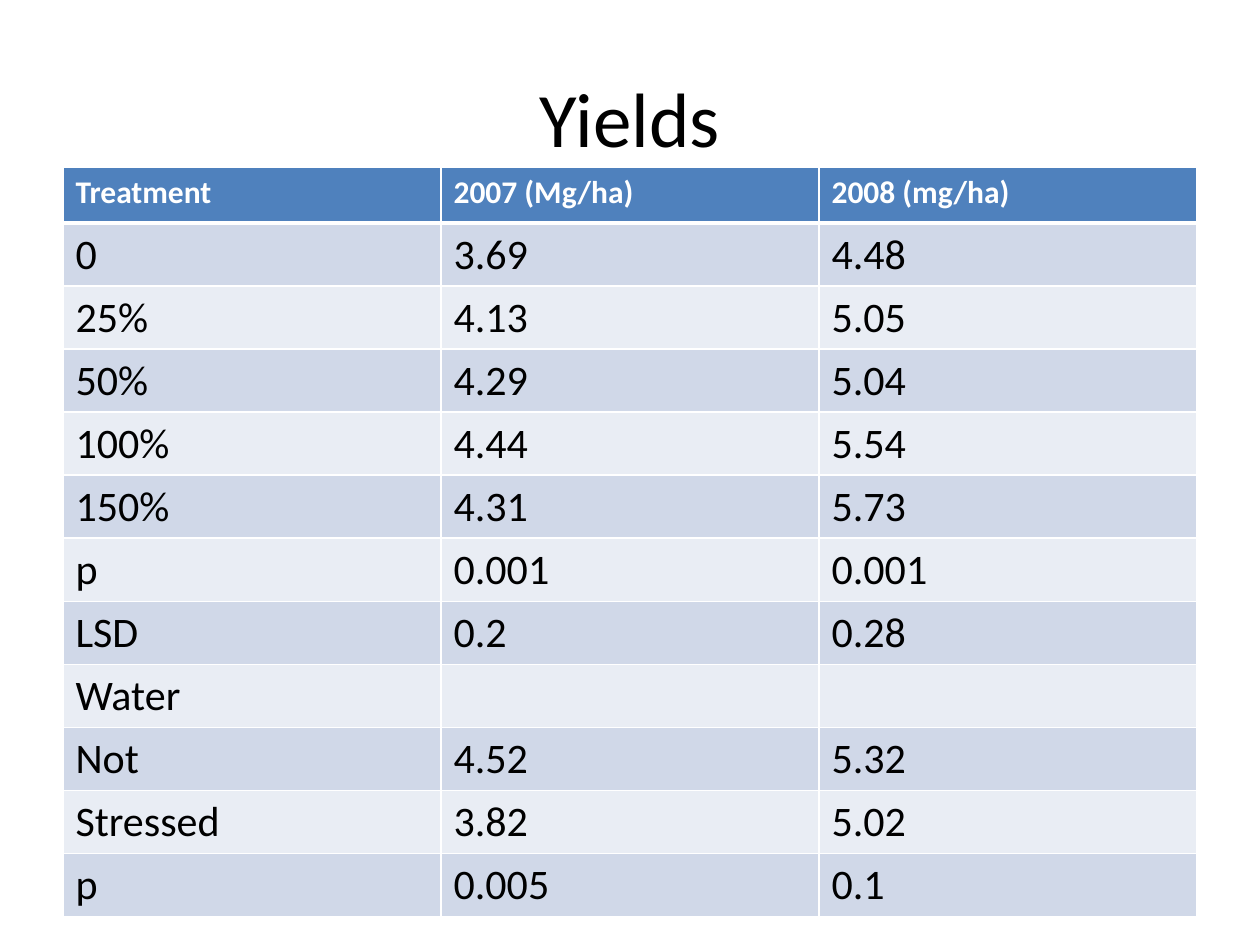
from lxml.etree import SubElement
from pptx import Presentation
from pptx.dml.color import RGBColor
from pptx.enum.text import MSO_ANCHOR, PP_ALIGN
from pptx.oxml.ns import qn
from pptx.util import Inches, Pt

# Content
TITLE = "Yields"
YIELDS = [
    ("Treatment", "2007 (Mg/ha)", "2008 (mg/ha)"),
    ("0", "3.69", "4.48"),
    ("25%", "4.13", "5.05"),
    ("50%", "4.29", "5.04"),
    ("100%", "4.44", "5.54"),
    ("150%", "4.31", "5.73"),
    ("p", "0.001", "0.001"),
    ("LSD", "0.2", "0.28"),
    ("Water", "", ""),
    ("Not", "4.52", "5.32"),
    ("Stressed", "3.82", "5.02"),
    ("p", "0.005", "0.1"),
]

# Formats
COLORS = {
    "text": "000000",
    "white": "FFFFFF",
    "header": "4F81BD",
    "dark_band": "D0D8E8",
    "light_band": "E9EDF4",
}
TITLE_FONT = {"name": "Calibri", "size": Pt(44), "bold": False}
HEADER_FONT = {"name": "Calibri", "size": Pt(18), "bold": True}
BODY_FONT = {"name": "Calibri", "size": Pt(24), "bold": False}
LEFT, WIDTH = Inches(0.5), Inches(9)
TABLE_TOP, TABLE_HEIGHT, ROW_HEIGHT = Inches(1.33), Inches(5.94), Inches(0.44)


def write(paragraph, text, font_format, color):
    run = paragraph.add_run()
    run.text = text
    for attribute, value in font_format.items():
        setattr(run.font, attribute, value)
    run.font.color.rgb = RGBColor.from_string(COLORS[color])


def fill_cell(cell, color, bottom_width):
    """Draw white borders, then the fill, in the order the schema asks for."""
    properties = cell._tc.get_or_add_tcPr()
    for side, width in {"L": 1, "R": 1, "T": 1, "B": bottom_width}.items():
        border = SubElement(properties, qn(f"a:ln{side}"), w=str(Pt(width)))
        border_fill = SubElement(border, qn("a:solidFill"))
        SubElement(border_fill, qn("a:srgbClr"), val=COLORS["white"])
    cell.fill.solid()
    cell.fill.fore_color.rgb = RGBColor.from_string(COLORS[color])


def row_style(row):
    """Return fill, font format, text colour and bottom border width."""
    if row == 0:
        return "header", HEADER_FONT, "white", 3
    return ("dark_band" if row % 2 else "light_band"), BODY_FONT, "text", 1


def main():
    presentation = Presentation()
    presentation.slide_width, presentation.slide_height = Inches(10), Inches(7.5)
    slide = presentation.slides.add_slide(presentation.slide_layouts[6])

    # Title
    title = slide.shapes.add_textbox(LEFT, Inches(0.3), WIDTH, Inches(1.25))
    title.text_frame.word_wrap = True
    title.text_frame.vertical_anchor = MSO_ANCHOR.MIDDLE
    heading = title.text_frame.paragraphs[0]
    heading.alignment = PP_ALIGN.CENTER
    write(heading, TITLE, TITLE_FONT, "text")

    # Yield table
    table_frame = slide.shapes.add_table(
        len(YIELDS), len(YIELDS[0]), LEFT, TABLE_TOP, WIDTH, TABLE_HEIGHT)
    table = table_frame.table
    for row, values in enumerate(YIELDS):
        table.rows[row].height = ROW_HEIGHT
        fill, font_format, color, bottom_width = row_style(row)
        for column, value in enumerate(values):
            cell = table.cell(row, column)
            fill_cell(cell, fill, bottom_width)
            if value:
                write(cell.text_frame.paragraphs[0], value, font_format, color)
    table_frame.height = TABLE_HEIGHT

    presentation.save("out.pptx")


if __name__ == "__main__":
    main()
